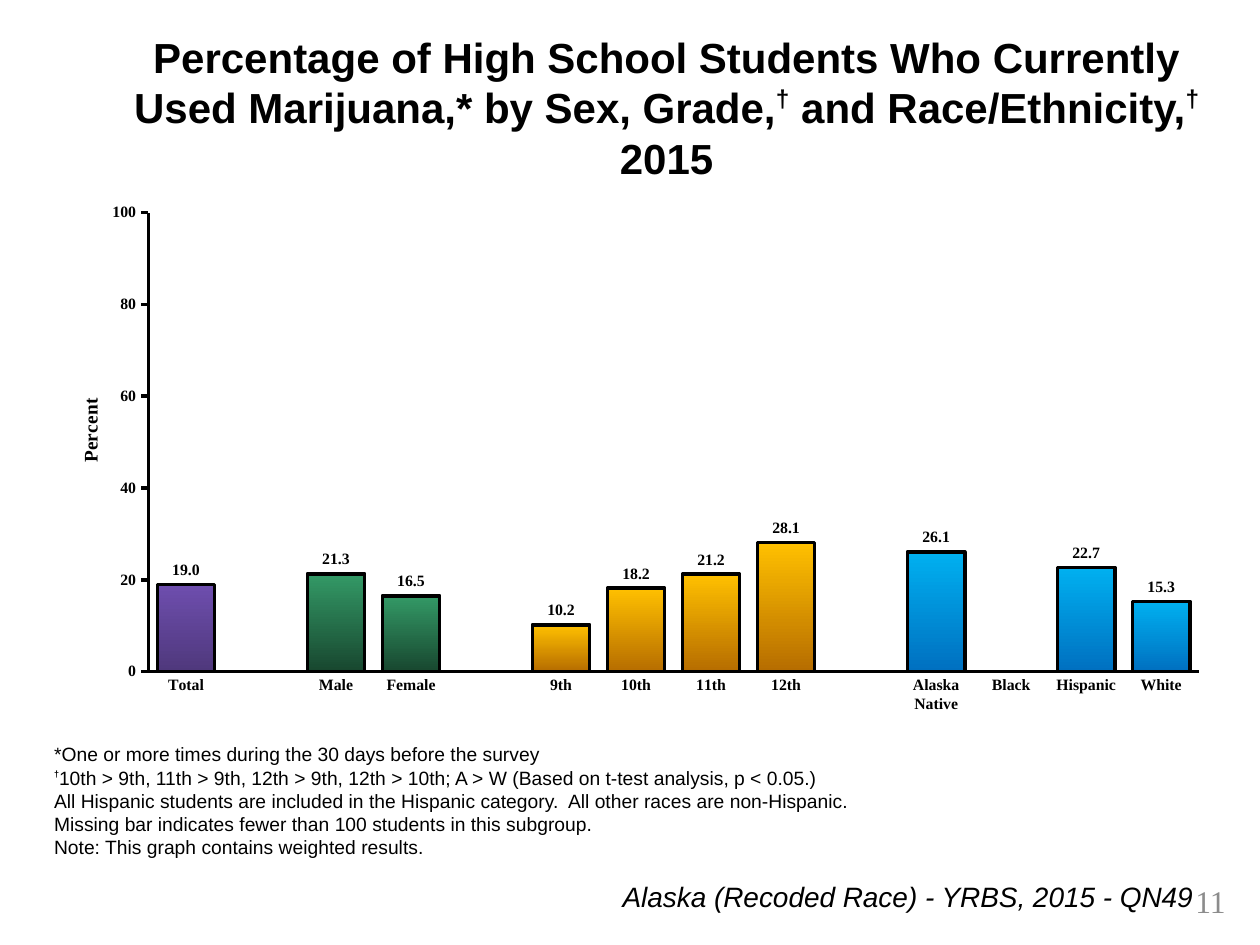
"""Build the slide on current marijuana use among Alaska high school students."""
from dataclasses import dataclass

from lxml import etree
from pptx import Presentation
from pptx import util as u
from pptx.chart import data as chart_data
from pptx.dml import color
from pptx.enum import chart as ce
from pptx.enum import text
from pptx.oxml import ns

Pt = u.Pt


@dataclass(frozen=True)
class Theme:
    sans: str = "Arial"
    serif: str = "Times New Roman"
    ink: str = "000000"
    muted: str = "8C8C8C"
    total: tuple = ("6E4EAE", "4F387C")
    sex: tuple = ("339966", "18472F")
    grade: tuple = ("FFC000", "B66D00")
    race: tuple = ("00B0F0", "0070C0")
    series: str = "BBE0E3"
    heading: int = 24
    chart: int = 18
    number: int = 18
    source: int = 16
    note: int = 11
    label: int = 9


theme = Theme()


def add_text(paragraphs, box, size, font=theme.sans, ink=theme.ink, bold=False,
             italic=False, align=text.PP_ALIGN.LEFT, anchor=text.MSO_ANCHOR.TOP,
             dagger_size=None, dagger_rise=40):
    frame = slide.shapes.add_textbox(*map(Pt, box)).text_frame
    frame.word_wrap = True
    frame.auto_size = text.MSO_AUTO_SIZE.SHAPE_TO_FIT_TEXT
    frame.vertical_anchor = anchor
    for number, content in enumerate(paragraphs):
        paragraph = frame.add_paragraph() if number else frame.paragraphs[0]
        paragraph.alignment = align
        for piece in content.replace("†", "|†|").split("|"):
            if not piece:
                continue
            run = paragraph.add_run()
            run.text = piece
            raised = piece == "†"
            run.font.name = font
            run.font.size = Pt(dagger_size if raised and dagger_size else size)
            run.font.bold = bold or raised
            run.font.italic = italic
            run.font.color.rgb = color.RGBColor.from_string(ink)
            if raised:
                run.font._element.set("baseline", str(dagger_rise * 1000))


def place(part, index, **settings):
    for old in part.findall(ns.qn("c:layout")):
        part.remove(old)
    layout = etree.Element(ns.qn("c:layout"))
    manual = etree.SubElement(layout, ns.qn("c:manualLayout"))
    for key, value in settings.items():
        etree.SubElement(manual, ns.qn("c:" + key)).set("val", str(value))
    part.insert(index, layout)


deck = Presentation()
deck.slide_width, deck.slide_height = Pt(720), Pt(540)
slide = deck.slides.add_slide(deck.slide_layouts[6])
black = color.RGBColor.from_string(theme.ink)

add_text(["11"], (676, 500.4, 44, 28.8), theme.number, font=theme.serif, ink=theme.muted)
add_text(["Percentage of High School Students Who Currently Used Marijuana,* "
          "by Sex, Grade,† and Race/Ethnicity,† 2015"],
         (54, 14.4, 653.8, 94.3), theme.heading, bold=True, align=text.PP_ALIGN.CENTER)
add_text(["*One or more times during the 30 days before the survey",
          "†10th > 9th, 11th > 9th, 12th > 9th, 12th > 10th; A > W (Based on t-test analysis, p < 0.05.)",
          "All Hispanic students are included in the Hispanic category.  All other races are non-Hispanic.",
          "Missing bar indicates fewer than 100 students in this subgroup.",
          "Note: This graph contains weighted results."],
         (23.8, 419.8, 648, 74.2), theme.note, anchor=text.MSO_ANCHOR.BOTTOM,
         dagger_size=theme.label, dagger_rise=50)
add_text(["Alaska (Recoded Race) - YRBS, 2015 - QN49"], (12.2, 499, 676.8, 26.6),
         theme.source, italic=True, align=text.PP_ALIGN.RIGHT)

groups = [
    (theme.total, [("Total", 19.0)]),
    (theme.sex, [("Male", 21.3), ("Female", 16.5)]),
    (theme.grade, [("9th", 10.2), ("10th", 18.2), ("11th", 21.2), ("12th", 28.1)]),
    (theme.race, [("Alaska Native", 26.1), ("Black", None), ("Hispanic", 22.7), ("White", 15.3)]),
]
bars = []
for gradient, members in groups:
    if bars:
        bars.append(("", None, None))
    bars += [(name, percent, gradient) for name, percent in members]

survey = chart_data.CategoryChartData()
survey.categories = [name for name, _, _ in bars]
survey.add_series("Series 1", [percent for _, percent, _ in bars])
chart = slide.shapes.add_chart(ce.XL_CHART_TYPE.COLUMN_CLUSTERED, Pt(29.5), Pt(106.6),
                               Pt(658.8), Pt(305.3), survey).chart
chart.has_legend = False
chart.has_title = False
chart.font.name = theme.serif
chart.font.size = Pt(theme.chart)
chart.font.color.rgb = black

plot = chart.plots[0]
plot.gap_width = 31
plot.overlap = 100
plot.vary_by_categories = False
plot.has_data_labels = True
labels = plot.data_labels
labels.show_value = True
labels.number_format = "#,##0.0"
labels.number_format_is_linked = False
labels.position = ce.XL_LABEL_POSITION.OUTSIDE_END

percents = chart.value_axis
percents.minimum_scale, percents.maximum_scale, percents.major_unit = 0, 100, 20
percents.has_major_gridlines = False
percents.major_tick_mark = ce.XL_TICK_MARK.OUTSIDE
chart.category_axis.major_tick_mark = ce.XL_TICK_MARK.NONE
for axis in (percents, chart.category_axis):
    axis.minor_tick_mark = ce.XL_TICK_MARK.NONE
    axis.tick_labels.number_format = "General"
    axis.tick_labels.number_format_is_linked = False
    axis.format.line.color.rgb = black
    axis.format.line.width = Pt(2)
for font in (labels.font, percents.tick_labels.font, chart.category_axis.tick_labels.font):
    font.name = theme.serif
    font.size = Pt(theme.label)
    font.bold = True
    font.color.rgb = black

percents.has_title = True
percents.axis_title.text_frame.text = "Percent"
caption = percents.axis_title.text_frame.paragraphs[0].runs[0].font
caption.name = theme.serif
caption.size = Pt(theme.note)
caption.bold = True
caption.color.rgb = black
place(percents.axis_title._element, 1, xMode="edge", yMode="edge", x=0.02, y=0.39)
place(chart._chartSpace.chart.plotArea, 0, layoutTarget="inner", xMode="edge",
      yMode="edge", x=0.084, y=0.049, w=0.911, h=0.859)

series = plot.series[0]
series.format.fill.solid()
series.format.fill.fore_color.rgb = color.RGBColor.from_string(theme.series)
series.format.line.color.rgb = black
series.format.line.width = Pt(2)
for position, (_, _, gradient) in enumerate(bars):
    if gradient is None:
        continue
    bar = series.points[position].format
    bar.fill.gradient()
    bar.fill.gradient_angle = 270
    for stop, shade in zip(bar.fill.gradient_stops, gradient):
        stop.color.rgb = color.RGBColor.from_string(shade)
    bar.line.color.rgb = black
    bar.line.width = Pt(2)

deck.save("out.pptx")
